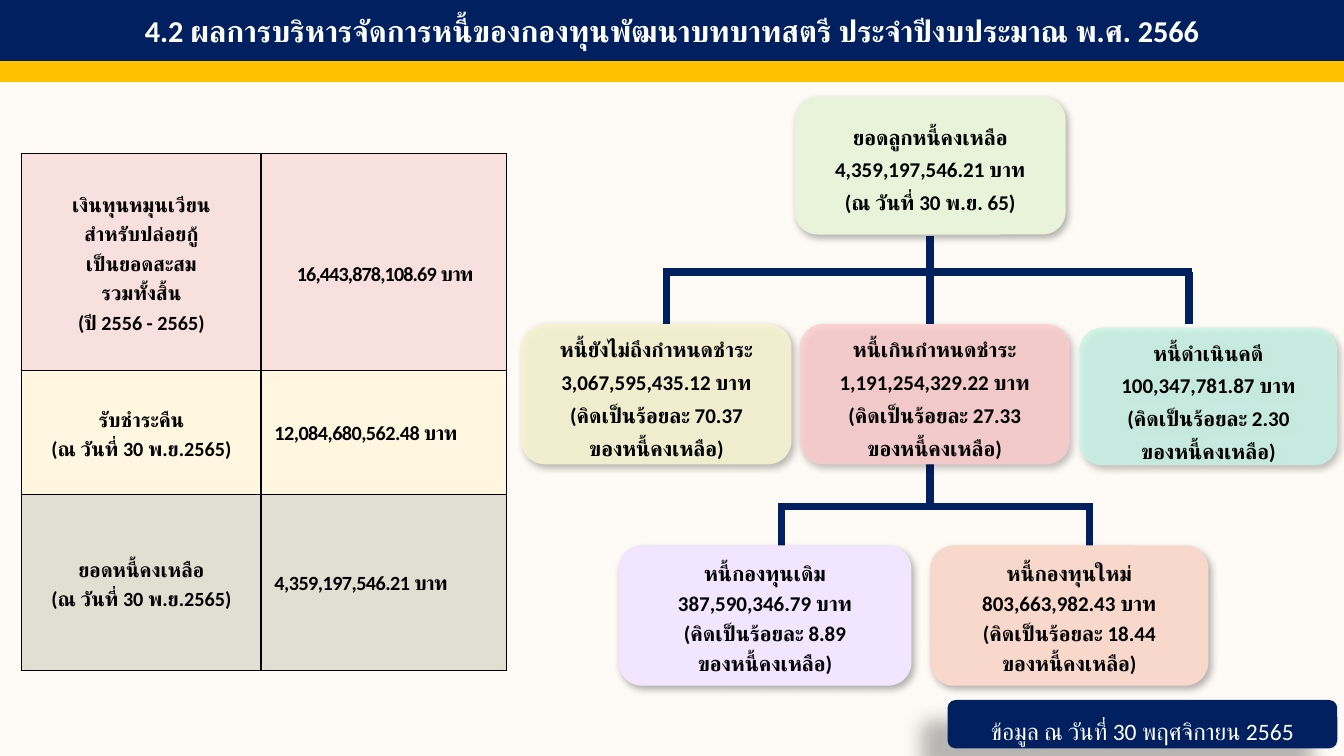
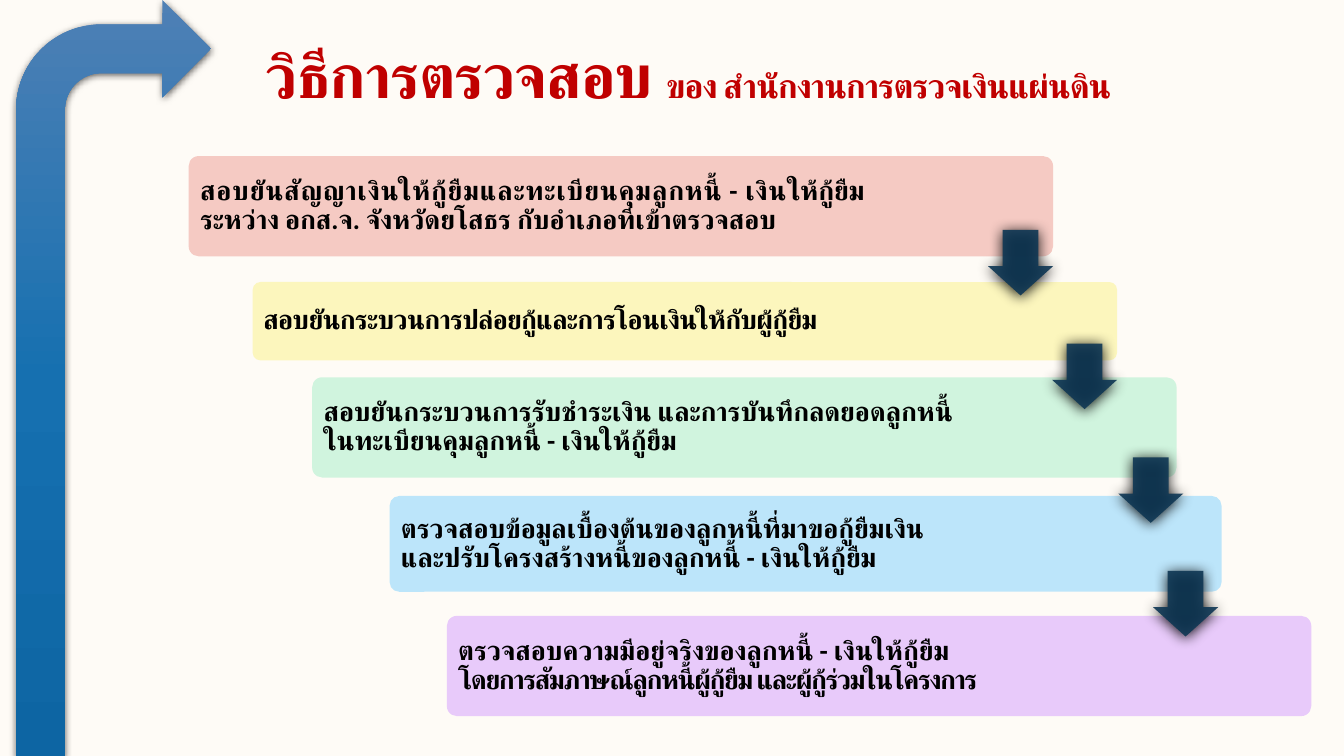
from copy import deepcopy
from dataclasses import dataclass

from lxml.etree import SubElement
from pptx import Presentation
from pptx.dml.color import RGBColor
from pptx.enum.shapes import MSO_CONNECTOR as Connector, MSO_SHAPE as Shape
from pptx.enum.text import MSO_ANCHOR as Anchor, PP_ALIGN as Align
from pptx.oxml import parse_xml
from pptx.oxml.ns import nsdecls, qn
from pptx.util import Inches, Pt

FONT = "Calibri"
NAVY, GOLD, CREAM = "002060", "FFC000", "FEFBF6"
BLACK, WHITE, RED = "000000", "FFFFFF", "C00000"
# Shadows: opacity in percent, blur, distance (points), direction (degrees)
CARD_SHADOW = (30, 4.5, 2.6, 53)
FOOTER_SHADOW = (28, 11.8, 19.7, 141)
STEP_SHADOW = (100, 8.5, 1, 90)
BEND_SHADOW = (63, 4.5, 1.5, 90)


@dataclass
class Box:
    left: float
    top: float
    width: float
    height: float

    def x(self, share):
        return Inches(self.left + self.width * share / 100)

    def y(self, share):
        return Inches(self.top + self.height * share / 100)

    def area(self, left, top, width, height):
        """Return the box that takes the given percentages of this one."""
        return Box(self.left + self.width * left / 100,
                   self.top + self.height * top / 100,
                   self.width * width / 100, self.height * height / 100)

    def frame(self):
        return [Inches(v) for v in (self.left, self.top, self.width, self.height)]


PAGE = Box(0, 0, 11.11, 6.25)


# Shared drawing helpers

def color(hex_value):
    return RGBColor.from_string(hex_value)


def paint(fill, hex_value):
    fill.solid()
    fill.fore_color.rgb = color(hex_value)


def set_opacity(properties, opacity):
    if opacity < 100:
        rgb = properties.find(qn("a:solidFill")).find(qn("a:srgbClr"))
        SubElement(rgb, qn("a:alpha")).set("val", str(opacity * 1000))


def add_shadow(shape, shadow):
    opacity, blur, distance, direction = shadow
    effects = shape._element.spPr.find(qn("a:effectLst"))
    effects.append(parse_xml(
        f'<a:outerShdw {nsdecls("a")} blurRad="{Pt(blur)}" dist="{Pt(distance)}" '
        f'dir="{direction * 60000}" algn="tl" rotWithShape="0">'
        f'<a:srgbClr val="{BLACK}"><a:alpha val="{opacity * 1000}"/></a:srgbClr>'
        '</a:outerShdw>'))


def add_block(slide, kind, box, fill, opacity=100, shadow=None, adjust=(), line=None):
    shape = slide.shapes.add_shape(kind, *box.frame())
    for index, value in enumerate(adjust):
        shape.adjustments[index] = value
    paint(shape.fill, fill)
    set_opacity(shape._element.spPr, opacity)
    if line:
        shape.line.color.rgb = color(line)
        shape.line.width = Pt(1)
    else:
        shape.line.fill.background()
    shape.shadow.inherit = False
    if shadow:
        add_shadow(shape, shadow)
    return shape


def add_run(paragraph, text, size, ink=BLACK, bold=True, spacing=0):
    run = paragraph.add_run()
    run.text = text
    font = run.font
    font.size, font.bold, font.name = Pt(size), bold, FONT
    font.color.rgb = color(ink)
    properties = run._r.get_or_add_rPr()
    SubElement(properties, qn("a:cs")).set("typeface", FONT)
    if spacing:
        properties.set("spc", str(round(spacing * 100)))


def write(frame, lines, size, align=Align.CENTER, anchor=Anchor.MIDDLE,
          leading=1.0, first_leading=None, **style):
    """Write one paragraph per line; a line is a list of (text, spacing) or a string."""
    frame.word_wrap = True
    frame.vertical_anchor = anchor
    for index, line in enumerate(lines):
        paragraph = frame.paragraphs[0] if index == 0 else frame.add_paragraph()
        paragraph.alignment = align
        paragraph.line_spacing = first_leading if first_leading and index == 0 else leading
        for text, spacing in [(line, 0)] if isinstance(line, str) else line:
            add_run(paragraph, text, size, spacing=spacing, **style)


def set_margins(target, left, top, right, bottom):
    target.margin_left, target.margin_top = Inches(left), Inches(top)
    target.margin_right, target.margin_bottom = Inches(right), Inches(bottom)


def add_line(slide, box, start, end):
    line = slide.shapes.add_connector(
        Connector.STRAIGHT, box.x(start[0]), box.y(start[1]), box.x(end[0]), box.y(end[1]))
    line.line.color.rgb = color(NAVY)
    line.line.width = Pt(4.5)
    SubElement(line._element.spPr, qn("a:effectLst"))


def add_page(presentation):
    slide = presentation.slides.add_slide(presentation.slide_layouts[6])
    paint(slide.background.fill, CREAM)
    return slide


# Slide 1: debt management results

def draw_header(slide, box, title):
    band = add_block(slide, Shape.RECTANGLE, box.area(0, 0, 100, 76), NAVY, line=NAVY)
    write(band.text_frame, [title], 18, ink=WHITE)
    add_block(slide, Shape.RECTANGLE, box.area(0, 76, 100, 24), GOLD, line=GOLD)


def draw_footer(slide, box, text):
    label = add_block(slide, Shape.ROUNDED_RECTANGLE, box, NAVY, shadow=FOOTER_SHADOW)
    write(label.text_frame, [text], 14, leading=1.5, ink=WHITE, bold=False)


def style_cell(cell, fill, opacity):
    paint(cell.fill, fill)
    properties = cell._tc.get_or_add_tcPr()
    set_opacity(properties, opacity)
    for index, side in enumerate(("lnL", "lnR", "lnT", "lnB")):
        properties.insert(index, parse_xml(
            f'<a:{side} {nsdecls("a")} w="{Pt(1)}"><a:solidFill>'
            f'<a:srgbClr val="{BLACK}"/></a:solidFill></a:{side}>'))


# label lines, amount, amount spacing, alignment, amount margins, fill, opacity, row share
BALANCES = [
    (["เงินทุนหมุนเวียน", "สำหรับปล่อยกู้", "เป็นยอดสะสม", "รวมทั้งสิ้น", "(ปี 2556 - 2565)"],
     "16,443,878,108.69 บาท", -0.5, Align.CENTER, (0.03, 0.2, 0.01, 0), "F7DAD9", 80, 42),
    (["รับชำระคืน", "(ณ วันที่ 30 พ.ย.2565)"],
     "12,084,680,562.48 บาท", -0.3, Align.LEFT, (0.11, 0.01, 0.01, 0), "FFF5DA", 80, 24),
    (["ยอดหนี้คงเหลือ", "(ณ วันที่ 30 พ.ย.2565)"],
     "4,359,197,546.21 บาท", -0.3, Align.LEFT, (0.11, 0.01, 0.01, 0), "D6D2C4", 70, 34),
]


def draw_balances(slide, box):
    table = slide.shapes.add_table(len(BALANCES), 2, *box.frame()).table
    table.first_row = table.horz_banding = False
    for column, share in zip(table.columns, (49.4, 50.6)):
        column.width = Inches(box.width * share / 100)
    for row, balance in zip(table.rows, BALANCES):
        label, amount, spacing, align, margins, fill, opacity, share = balance
        row.height = Inches(box.height * share / 100)
        label_cell, amount_cell = row.cells
        set_margins(label_cell, 0.12, 0.06, 0.12, 0.06)
        set_margins(amount_cell, *margins)
        write(label_cell.text_frame, label, 12, leading=1.2)
        write(amount_cell.text_frame, [[(amount, spacing)]], 12, align=align)
        for cell in row.cells:
            cell.vertical_anchor = Anchor.MIDDLE
            style_cell(cell, fill, opacity)


ROOT_STYLE = dict(leading=1.3)
DEBT_STYLE = dict(leading=1.3, first_leading=1.0, anchor=Anchor.TOP)
FUND_STYLE = dict(leading=1.2)
# place in the tree, fill, opacity, text style, lines
CARDS = [
    ((33.5, 0, 33.2, 23.4), "E8F3DA", 100, ROOT_STYLE,
     ["ยอดลูกหนี้คงเหลือ", "4,359,197,546.21 บาท", "(ณ วันที่ 30 พ.ย. 65)"]),
    ((0, 38.6, 33.1, 23.8), "F6F4D2", 90, DEBT_STYLE,
     ["หนี้ยังไม่ถึงกำหนดชำระ", "3,067,595,435.12 บาท", "(คิดเป็นร้อยละ 70.37", "ของหนี้คงเหลือ)"]),
    ((34.1, 38.6, 33.1, 23.8), "FFCDCE", 80, DEBT_STYLE,
     ["หนี้เกินกำหนดชำระ", "1,191,254,329.22 บาท", "(คิดเป็นร้อยละ 27.33", "ของหนี้คงเหลือ)"]),
    ((68.4, 39.2, 31.6, 23.4), "C8F5E8", 80, DEBT_STYLE,
     ["หนี้ดำเนินคดี", "100,347,781.87 บาท", "(คิดเป็นร้อยละ 2.30", "ของหนี้คงเหลือ)"]),
    ((11.9, 76.2, 35.9, 23.8), "F2E5FF", 100, FUND_STYLE,
     ["หนี้กองทุนเดิม", "387,590,346.79 บาท", "(คิดเป็นร้อยละ 8.89", "ของหนี้คงเหลือ)"]),
    ((50.1, 76.2, 34.1, 23.8), "F8D8CA", 100, FUND_STYLE,
     ["หนี้กองทุนใหม่", "803,663,982.43 บาท", "(คิดเป็นร้อยละ 18.44", "ของหนี้คงเหลือ)"]),
]
# trunk top, crossbar and drop end, then the columns of the drops
TRUNK = 50.1
BRANCHES = [(23.6, 29.8, 38.6, (17.8, TRUNK, 81.8)),
            (62.4, 69.6, 76.3, (31.9, 69.6))]
OVERHANG = 0.4


def draw_tree(slide, box):
    for top, bar, bottom, drops in BRANCHES:
        add_line(slide, box, (TRUNK, top), (TRUNK, bar))
        add_line(slide, box, (drops[0] - OVERHANG, bar), (drops[-1] + OVERHANG, bar))
        for drop in drops:
            add_line(slide, box, (drop, bar), (drop, bottom))
    for place, fill, opacity, style, lines in CARDS:
        card = add_block(slide, Shape.ROUNDED_RECTANGLE, box.area(*place), fill,
                         opacity, CARD_SHADOW)
        write(card.text_frame, lines, 12.5, **style)


def build_results(presentation):
    slide = add_page(presentation)
    draw_header(slide, PAGE.area(0, 0, 100, 10.7),
                "4.2 ผลการบริหารจัดการหนี้ของกองทุนพัฒนาบทบาทสตรี ประจำปีงบประมาณ พ.ศ. 2566")
    draw_footer(slide, PAGE.area(70.5, 92.6, 29, 6.4), "ข้อมูล ณ วันที่ 30 พฤศจิกายน 2565")
    draw_tree(slide, PAGE.area(38.8, 12.8, 60.7, 77.9))
    draw_balances(slide, PAGE.area(1.6, 20.3, 36.1, 68.4))


# Slide 2: audit method

# left, top, width, height, fill, runs with their letter spacing
STEPS = [
    (0, 0, 77, 17.9, "F5CAC3",
     [("สอบยันสัญญาเงินให้กู้ยืมและทะเบียนคุมลูกหนี้ - เงิน", 0.5),
      ("ให้กู้ยืม\vระหว่าง อกส.จ. จังหวัดยโสธร กับอำเภอที่เข้าตรวจสอบ", 0)]),
    (5.7, 22.5, 77, 14, "FCF6BD",
     [("สอบยันกระบวนการปล่อยกู้และการโอนเงินให้กับผู้กู้ยืม", -0.4)]),
    (11, 39.5, 77, 17.9, "D0F4DE",
     [("สอบยันกระบวนการรับชำระเงิน และการบันทึกลดยอดลูกหนี้\vในทะเบียนคุมลูกหนี้ - เงินให้กู้ยืม", 0)]),
    (17.9, 60.7, 74.1, 17.1, "BCE5FA",
     [("ตรวจสอบข้อมูลเบื้องต้นของลูกหนี้ที่มาขอกู้ยืมเงิน\vและปรับโครงสร้างหนี้ของลูกหนี้ - เงินให้กู้ยืม", 0)]),
    (23, 82.1, 77, 17.9, "E8CAFA",
     [("ตรวจสอบความมีอยู่จริงของลูกหนี้ - เงินให้กู้ยืม\v", 0),
      ("โดยการสัมภาษณ์ลูกหนี้ผู้กู้ยืม และผู้กู้ร่วมในโครงการ", -0.8)]),
]
ARROW_COLUMNS = (71.2, 76.9, 82.8, 85.9)


def write_step(frame, runs):
    """Write the runs in one paragraph, with a line break at each vertical tab."""
    paragraph = frame.paragraphs[0]
    paragraph.alignment, paragraph.line_spacing = Align.LEFT, 0.9
    frame.word_wrap, frame.vertical_anchor = True, Anchor.MIDDLE
    for text, spacing in runs:
        for index, piece in enumerate(text.split("\v")):
            if index:
                paragraph.add_line_break()
            if piece:
                add_run(paragraph, piece, 16, spacing=spacing)


def draw_steps(slide, box):
    for *place, fill, runs in STEPS:
        bar = add_block(slide, Shape.ROUNDED_RECTANGLE, box.area(*place), fill, adjust=(0.1,))
        set_margins(bar.text_frame, 0.07, 0.07, 0.9, 0.07)
        write_step(bar.text_frame, runs)
    for index, left in enumerate(ARROW_COLUMNS):
        add_block(slide, Shape.DOWN_ARROW, box.area(left, 13.2 + 20.3 * index, 5.8, 11.7),
                  "0F3754", 90, STEP_SHADOW, adjust=(0.55, 0.45))


def draw_bend(slide, box):
    bend = add_block(slide, Shape.BENT_ARROW, box, "1670B0", shadow=BEND_SHADOW)
    bend.fill.gradient()
    bend.fill.gradient_angle = 270
    first, last = bend.fill.gradient_stops
    first.color.rgb, last.color.rgb = color("4E80B5"), color("0D65A3")
    first.position, last.position = 0, 1
    stops = bend._element.spPr.find(qn("a:gradFill")).find(qn("a:gsLst"))
    middle = deepcopy(stops[0])
    middle.set("pos", "50000")
    middle.find(qn("a:srgbClr")).set("val", "1670B0")
    stops.insert(1, middle)


def draw_title(slide, box):
    frame = slide.shapes.add_textbox(*box.frame()).text_frame
    frame.word_wrap, frame.vertical_anchor = True, Anchor.MIDDLE
    for text, size in (("วิธีการตรวจสอบ ", 36.7), ("ของ สำนักงานการตรวจเงินแผ่นดิน", 20)):
        add_run(frame.paragraphs[0], text, size, RED, spacing=-0.6)


def build_method(presentation):
    slide = add_page(presentation)
    draw_steps(slide, PAGE.area(14.04, 20.64, 83.53, 74.08))
    draw_bend(slide, PAGE.area(1.2, 0, 14.5, 100))
    draw_title(slide, PAGE.area(18.9, 1, 80, 17.6))


def main():
    presentation = Presentation()
    presentation.slide_width, presentation.slide_height = Inches(PAGE.width), Inches(PAGE.height)
    build_results(presentation)
    build_method(presentation)
    presentation.save("out.pptx")


if __name__ == "__main__":
    main()
